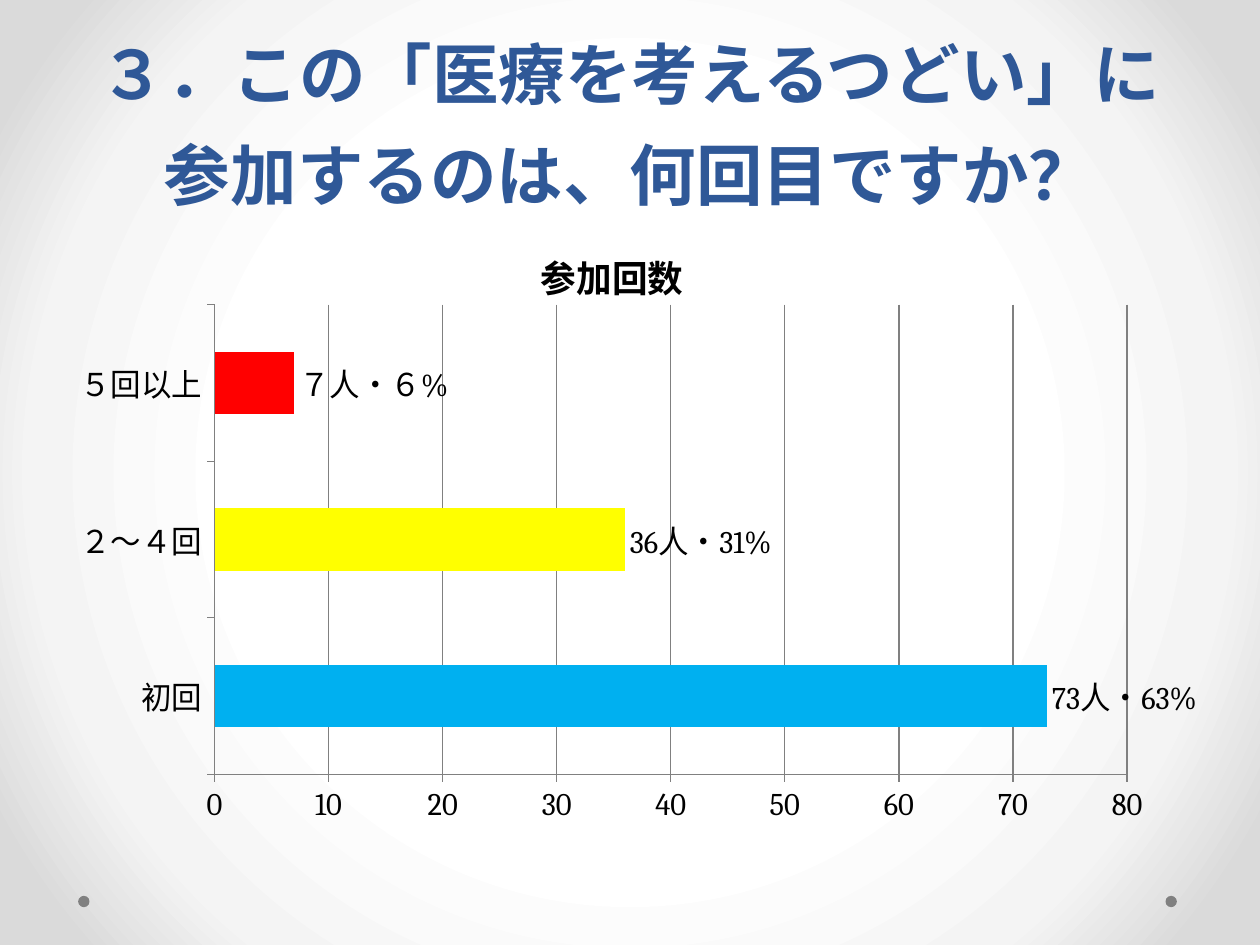
import pptx
import pptx.chart.data
import pptx.dml.color
import pptx.enum.chart
import pptx.enum.shapes
import pptx.enum.text
import pptx.oxml
import pptx.oxml.ns
import pptx.util
from pptx.util import Inches

FONT = "Cambria"
GREY = "808080"
ANSWERS = [
    ("初回", 73, "73人・63%", "00B0F0"),
    ("２～４回", 36, "36人・31%", "FFFF00"),
    ("５回以上", 7, "７人・６%", "FF0000"),
]


def color(value):
    return pptx.dml.color.RGBColor.from_string(value)


def set_font(font, size, value="000000", bold=False):
    font.name = FONT
    font.size = pptx.util.Pt(size)
    font.bold = bold
    font.color.rgb = color(value)


def set_background(page):
    """Radial gradient, white in the middle and grey at the corners."""
    fill = page.background.fill
    fill.gradient()
    stops = "".join(
        f'<a:gs pos="{percent * 1000}"><a:srgbClr val="{value}"/></a:gs>'
        for percent, value in [(50, "FFFFFF"), (76, "F4F4F4"), (92, "DADADA")]
    )
    gradient = pptx.oxml.parse_xml(
        f'<a:gradFill {pptx.oxml.ns.nsdecls("a")} rotWithShape="1">'
        f'<a:gsLst>{stops}</a:gsLst><a:path path="circle">'
        '<a:fillToRect l="50000" t="50000" r="50000" b="50000"/>'
        '</a:path></a:gradFill>'
    )
    old = page.background._cSld.find(".//" + pptx.oxml.ns.qn("a:gradFill"))
    old.getparent().replace(old, gradient)


def add_dot(page, left):
    dot = page.shapes.add_shape(
        pptx.enum.shapes.MSO_SHAPE.OVAL,
        Inches(left), Inches(7.11), Inches(0.09), Inches(0.09))
    dot.shadow.inherit = False
    dot.fill.solid()
    dot.fill.fore_color.rgb = color(GREY)
    dot.line.fill.background()


def set_title(page, text):
    title = page.shapes.title
    title.left, title.top = Inches(0.5), Inches(0)
    title.width, title.height = Inches(9), Inches(1.75)
    frame = title.text_frame
    frame.text = text
    frame.word_wrap = True
    frame.auto_size = pptx.enum.text.MSO_AUTO_SIZE.NONE
    frame.vertical_anchor = pptx.enum.text.MSO_ANCHOR.BOTTOM
    para = frame.paragraphs[0]
    para.alignment = pptx.enum.text.PP_ALIGN.CENTER
    para.line_spacing = pptx.util.Pt(58)
    set_font(para.font, 38, "2F5897", True)


def set_plot_layout(chart, left, top, width, height):
    """Place the inner plot area by fractions of the chart."""
    area = chart._chartSpace.chart.plotArea
    for old in area.findall(pptx.oxml.ns.qn("c:layout")):
        area.remove(old)
    places = "".join(
        f'<c:{tag} val="{value}"/>'
        for tag, value in [("x", left), ("y", top), ("w", width), ("h", height)]
    )
    area.insert(0, pptx.oxml.parse_xml(
        f'<c:layout {pptx.oxml.ns.nsdecls("c")}><c:manualLayout>'
        '<c:layoutTarget val="inner"/><c:xMode val="edge"/><c:yMode val="edge"/>'
        f'{places}</c:manualLayout></c:layout>'))


def style_axis(axis):
    axis.major_tick_mark = pptx.enum.chart.XL_TICK_MARK.OUTSIDE
    axis.minor_tick_mark = pptx.enum.chart.XL_TICK_MARK.NONE
    axis.format.line.color.rgb = color(GREY)
    set_font(axis.tick_labels.font, 18)


def add_answer_chart(page, name):
    data = pptx.chart.data.CategoryChartData()
    data.categories = [answer[0] for answer in ANSWERS]
    data.add_series(name, [answer[1] for answer in ANSWERS])
    chart = page.shapes.add_chart(
        pptx.enum.chart.XL_CHART_TYPE.BAR_CLUSTERED,
        Inches(0.5), Inches(1.75), Inches(9), Inches(4.95), data).chart
    set_font(chart.font, 18)
    chart.has_legend = False
    chart.has_title = True
    chart.chart_title.text_frame.text = name
    set_font(chart.chart_title.text_frame.paragraphs[0].font, 21, bold=True)
    set_plot_layout(chart, 0.138, 0.135, 0.831, 0.753)

    # Axes
    style_axis(chart.category_axis)
    values = chart.value_axis
    style_axis(values)
    values.minimum_scale, values.maximum_scale, values.major_unit = 0, 80, 10
    values.has_major_gridlines = True
    values.major_gridlines.format.line.color.rgb = color(GREY)

    # Bars and their labels
    plot = chart.plots[0]
    plot.gap_width = 150
    plot.vary_by_categories = False
    series = plot.series[0]
    series.format.fill.solid()
    series.format.fill.fore_color.rgb = color("9C5252")
    series.data_labels.show_value = True
    set_font(series.data_labels.font, 18)
    for index, (_, _, text, bar_color) in enumerate(ANSWERS):
        point = series.points[index]
        point.format.fill.solid()
        point.format.fill.fore_color.rgb = color(bar_color)
        label = point.data_label
        label.text_frame.text = text
        set_font(label.text_frame.paragraphs[0].runs[0].font, 18)
        label.position = pptx.enum.chart.XL_LABEL_POSITION.OUTSIDE_END


def main():
    deck = pptx.Presentation()
    deck.slide_width, deck.slide_height = Inches(10), Inches(7.5)
    page = deck.slides.add_slide(deck.slide_layouts[5])
    set_background(page)
    for left in (9.25, 0.62):
        add_dot(page, left)
    set_title(page, "３．この「医療を考えるつどい」に\v参加するのは、何回目ですか？")
    add_answer_chart(page, "参加回数")
    deck.save("out.pptx")


if __name__ == "__main__":
    main()
